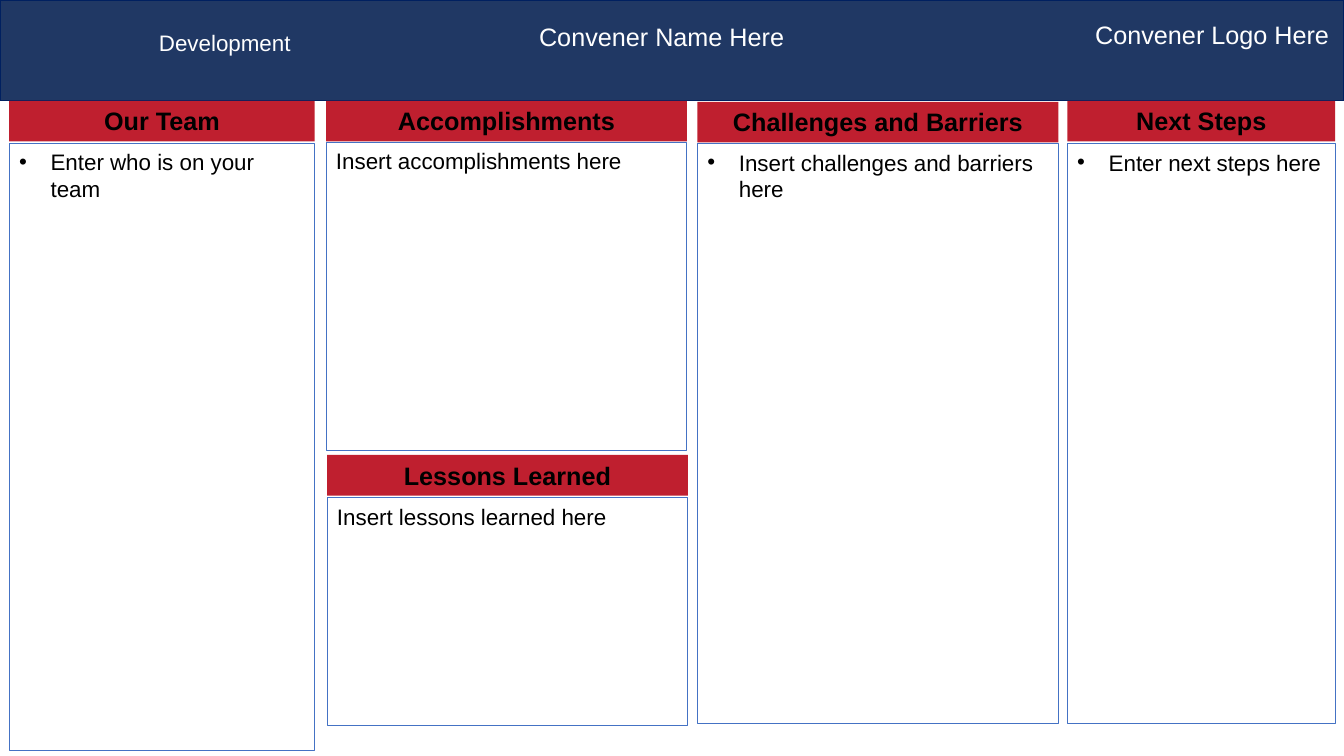
import pptx
import pptx.util
import pptx.dml.color
import pptx.enum.shapes
import pptx.enum.text
import lxml.etree

Pt = pptx.util.Pt
SHAPE = pptx.enum.shapes.MSO_SHAPE
ALIGN = pptx.enum.text.PP_ALIGN

COLORS = {"navy": "203864", "edge": "002060", "red": "BF1F2F",
          "blue": "4472C4", "black": "000000", "white": "FFFFFF"}
WIDE, HIGH = 960, 540
BAND = 72
HEAD = 29

# text, left, top, width, height, size, centred
TITLES = [
    ("Development", 105.1, 17, 110.9, 27, 16, True),
    ("Convener Name Here", 378, 11.5, 256.3, 30, 18, False),
    ("Convener Logo Here", 775.2, 10.1, 184.8, 30, 18, False),
]

# heading, body, left, top, width, body top, body height, bulleted
PANELS = [
    ("Our Team", "Enter who is on your team",
     6.6, 72, 218.2, 102.6, 433.8, True),
    ("Accomplishments", "Insert accomplishments here",
     232.9, 72, 257.8, 101.8, 220.2, False),
    ("Lessons Learned", "Insert lessons learned here",
     233.6, 325, 257.8, 355.6, 162.4, False),
    ("Challenges and Barriers", "Insert challenges and barriers here",
     498.2, 72.7, 257.8, 102.6, 414.4, True),
    ("Next Steps", "Enter next steps here",
     762.4, 72, 191.4, 102.6, 414.4, True),
]


def color(name):
    return pptx.dml.color.RGBColor.from_string(COLORS[name])


def block(slide, box, fill=None, line=None, width=0.75, kind=SHAPE.RECTANGLE):
    shape = slide.shapes.add_shape(kind, *map(Pt, box))
    shape.shadow.inherit = False
    if fill:
        shape.fill.solid()
        shape.fill.fore_color.rgb = color(fill)
    else:
        shape.fill.background()
    if line:
        shape.line.color.rgb = color(line)
        shape.line.width = Pt(width)
    else:
        shape.line.fill.background()
    return shape


def bullet(para, indent=22.5):
    props = para._p.get_or_add_pPr()
    props.set("marL", str(Pt(indent)))
    props.set("indent", str(-Pt(indent)))
    space = pptx.oxml.ns.qn("a:buFont")
    lxml.etree.SubElement(props, space).set("typeface", "Arial")
    mark = pptx.oxml.ns.qn("a:buChar")
    lxml.etree.SubElement(props, mark).set("char", "•")


def write(shape, text, size=16, ink="black", bold=False, center=False,
          dot=False):
    frame = shape.text_frame
    frame.word_wrap = True
    frame.vertical_anchor = pptx.enum.text.MSO_ANCHOR.TOP
    para = frame.paragraphs[0]
    para.alignment = ALIGN.CENTER if center else ALIGN.LEFT
    if dot:
        bullet(para)
    run = para.add_run()
    run.text = text
    run.font.name = "Arial"
    run.font.size = Pt(size)
    run.font.bold = bold
    run.font.color.rgb = color(ink)


def main():
    deck = pptx.Presentation()
    deck.slide_width, deck.slide_height = Pt(WIDE), Pt(HIGH)
    slide = deck.slides.add_slide(deck.slide_layouts[6])

    block(slide, (0, 0, WIDE, BAND), fill="navy", line="edge", width=1,
          kind=SHAPE.FLOWCHART_PROCESS)
    for text, left, top, width, height, size, center in TITLES:
        box = slide.shapes.add_textbox(*map(Pt, (left, top, width, height)))
        write(box, text, size=size, ink="white", center=center)

    for head, body, left, top, width, start, height, dot in PANELS:
        bar = block(slide, (left, top, width, HEAD), fill="red")
        write(bar, head, size=18, bold=True, center=True)
        area = block(slide, (left, start, width, height), line="blue")
        write(area, body, dot=dot)

    deck.save("out.pptx")


if __name__ == "__main__":
    main()
